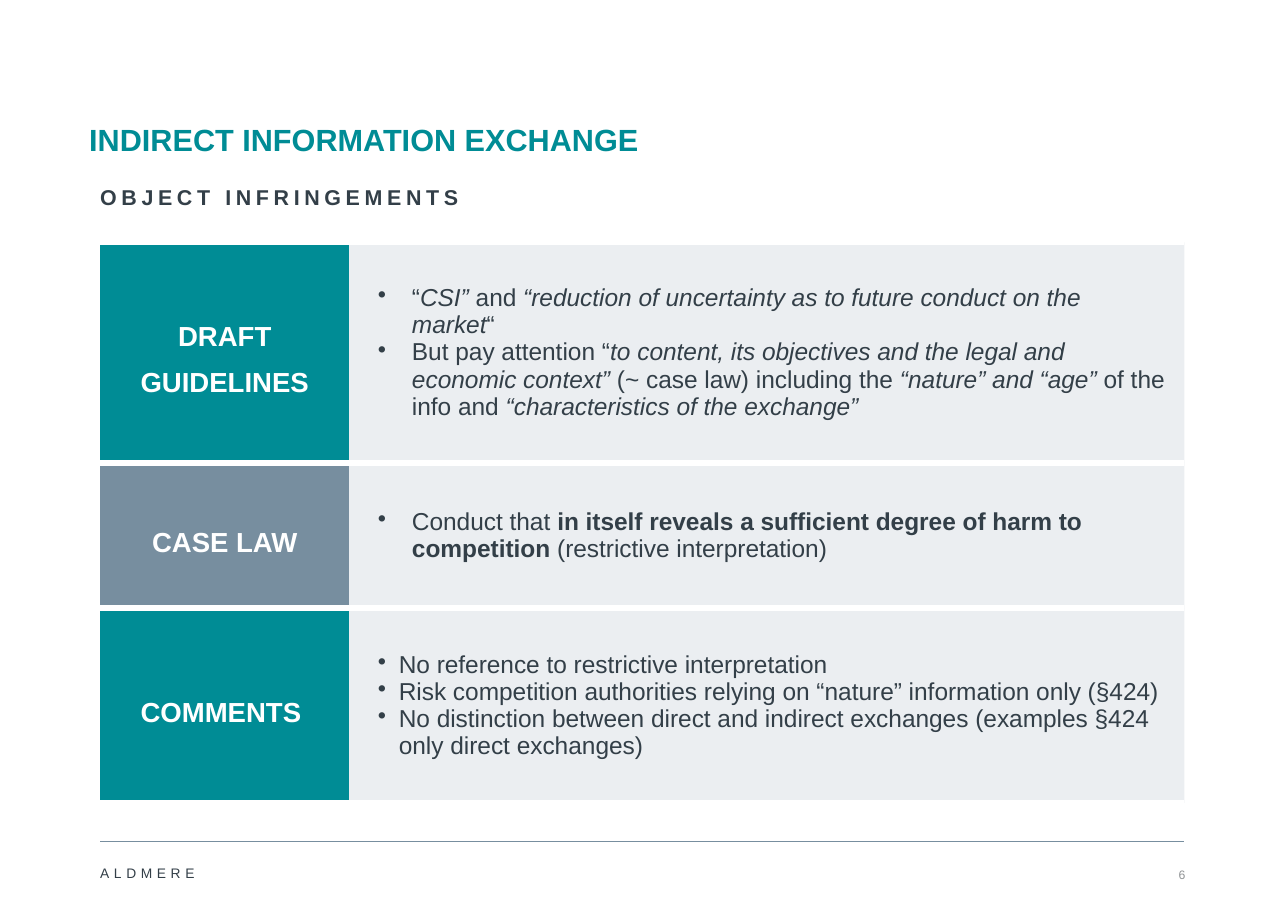
from lxml import etree
from pptx import Presentation
from pptx.dml.color import RGBColor
from pptx.enum.shapes import MSO_CONNECTOR
from pptx.enum.text import MSO_ANCHOR as Anchor, PP_ALIGN as Align
from pptx.oxml.ns import qn
from pptx.util import Inches, Pt

COLORS = {"teal": "008C95", "slate": "778E9F", "pale": "A4B3BF",
          "ink": "333F48", "grey": "909395", "white": "FFFFFF"}
FONT = "Arial"
COLUMN_WIDTHS = (2.26, 7.58)

# label, label fill, row height, bullet indent, bullets as (text, style) runs
ROWS = [
    ("DRAFT GUIDELINES", "teal", 2.0, 0.31, [
        [("“", ""), ("CSI” ", "i"), ("and", ""),
         (" “reduction of uncertainty as to future conduct on the market", "i"), ("“", "")],
        [("But pay attention “", ""),
         ("to content, its objectives and the legal and economic context”", "i"),
         (" (~ case law) including the", ""), (" “nature” and “age” ", "i"),
         ("of the info and ", ""), ("“characteristics of the exchange”", "i")],
    ]),
    ("CASE LAW", "slate", 1.32, 0.31, [
        [("Conduct that ", ""),
         ("in itself reveals a sufficient degree of harm to competition ", "b"),
         ("(restrictive interpretation)", "")],
    ]),
    ("COMMENTS ", "teal", 1.77, 0.19, [
        [("No reference to restrictive interpretation", "")],
        [("Risk competition authorities relying on “nature” information only (§424)", "")],
        [("No distinction between direct and indirect exchanges "
          "(examples §424 only direct exchanges)", "")],
    ]),
]


def rgb(name):
    return RGBColor.from_string(COLORS[name])


class SlideBuilder:
    def __init__(self, slide):
        self.slide = slide

    def style(self, paragraph, size, color, bold=False, align=Align.LEFT, spacing=1.0, after=0):
        font = paragraph.font
        font.name, font.size, font.bold = FONT, Pt(size), bold
        font.color.rgb = rgb(color)
        paragraph.alignment = align
        paragraph.line_spacing = spacing
        paragraph.space_after = Pt(after)

    def text(self, text, left, top, width, height, size, color,
             anchor=Anchor.BOTTOM, wrap=True, tracking=0, **style):
        frame = self.slide.shapes.add_textbox(
            Inches(left), Inches(top), Inches(width), Inches(height)).text_frame
        frame.margin_left = frame.margin_right = frame.margin_top = frame.margin_bottom = 0
        frame.word_wrap, frame.vertical_anchor = wrap, anchor
        paragraph = frame.paragraphs[0]
        run = paragraph.add_run()
        run.text = text
        self.style(paragraph, size, color, **style)
        if tracking:
            run.font._element.set("spc", str(tracking * 100))

    def line(self, left, right, y, color, width):
        connector = self.slide.shapes.add_connector(
            MSO_CONNECTOR.STRAIGHT, Inches(left), Inches(y), Inches(right), Inches(y))
        connector.line.color.rgb = rgb(color)
        connector.line.width = Pt(width)
        etree.SubElement(connector._element.spPr, qn("a:effectLst"))

    def table(self, rows, left, top):
        table = self.slide.shapes.add_table(
            len(rows), len(COLUMN_WIDTHS), Inches(left), Inches(top),
            Inches(sum(COLUMN_WIDTHS)), Inches(sum(row[2] for row in rows))).table
        table.first_row = table.horz_banding = False
        for column, width in zip(table.columns, COLUMN_WIDTHS):
            column.width = Inches(width)
        for index, (label, fill, height, indent, bullets) in enumerate(rows):
            table.rows[index].height = Inches(height)
            label_cell, bullet_cell = table.cell(index, 0), table.cell(index, 1)
            self.cell(label_cell, fill, 0.17)
            paragraph = label_cell.text_frame.paragraphs[0]
            paragraph.text = label
            self.style(paragraph, 18, "white", bold=True, align=Align.CENTER,
                       spacing=1.5, after=6)
            self.cell(bullet_cell, "pale", 0.26, alpha=21)
            self.bullets(bullet_cell.text_frame, bullets, indent)

    def cell(self, cell, fill, margin_left, alpha=100):
        """Fill a cell and give it white rules above and below only."""
        cell.vertical_anchor = Anchor.MIDDLE
        cell.margin_left = Inches(margin_left)
        cell.margin_right = cell.margin_top = cell.margin_bottom = Inches(0.17)
        cell.fill.solid()
        cell.fill.fore_color.rgb = rgb(fill)
        properties = cell._tc.get_or_add_tcPr()
        if alpha < 100:
            color = properties.find(qn("a:solidFill"))[0]
            etree.SubElement(color, qn("a:alpha"), val=str(alpha * 1000))
        for position, side in enumerate("LRTB"):
            border = etree.Element(qn(f"a:ln{side}"))
            if side in "TB":
                border.set("w", str(Pt(4.5)))
                solid = etree.SubElement(border, qn("a:solidFill"))
                etree.SubElement(solid, qn("a:srgbClr"), val=COLORS["white"])
            else:
                etree.SubElement(border, qn("a:noFill"))
            properties.insert(position, border)

    def bullets(self, frame, bullets, indent):
        for index, runs in enumerate(bullets):
            paragraph = frame.add_paragraph() if index else frame.paragraphs[0]
            self.style(paragraph, 16, "ink")
            for text, emphasis in runs:
                run = paragraph.add_run()
                run.text = text
                if emphasis == "i":
                    run.font.italic = True
                elif emphasis == "b":
                    run.font.bold = True
            properties = paragraph._p.get_or_add_pPr()
            properties.set("marL", str(Inches(indent)))
            properties.set("indent", str(-Inches(indent)))
            bullet = etree.Element(qn("a:buChar"), char="•")
            properties.find(qn("a:defRPr")).addprevious(bullet)


def main():
    presentation = Presentation()
    presentation.slide_width, presentation.slide_height = Inches(11.69), Inches(8.27)
    builder = SlideBuilder(presentation.slides.add_slide(presentation.slide_layouts[6]))
    builder.line(0.91, 10.75, 7.64, "slate", 0.5)
    builder.text("ALDMERE", 0.91, 7.8, 1.05, 0.2, 9, "ink", tracking=3, spacing=1.5, after=6)
    builder.text("6", 10.48, 7.81, 0.28, 0.2, 8, "grey", wrap=False, align=Align.RIGHT)
    builder.table(ROWS, 0.91, 2.2)
    builder.text("INDIRECT INFORMATION EXCHANGE", 0.81, 0.77, 9.84, 0.66, 20, "teal",
                 bold=True, spacing=1.1)
    builder.text("OBJECT INFRINGEMENTS", 0.91, 1.55, 10.06, 0.39, 14, "ink",
                 anchor=Anchor.TOP, bold=True, tracking=3, spacing=1.5, after=6)
    presentation.save("out.pptx")


if __name__ == "__main__":
    main()
